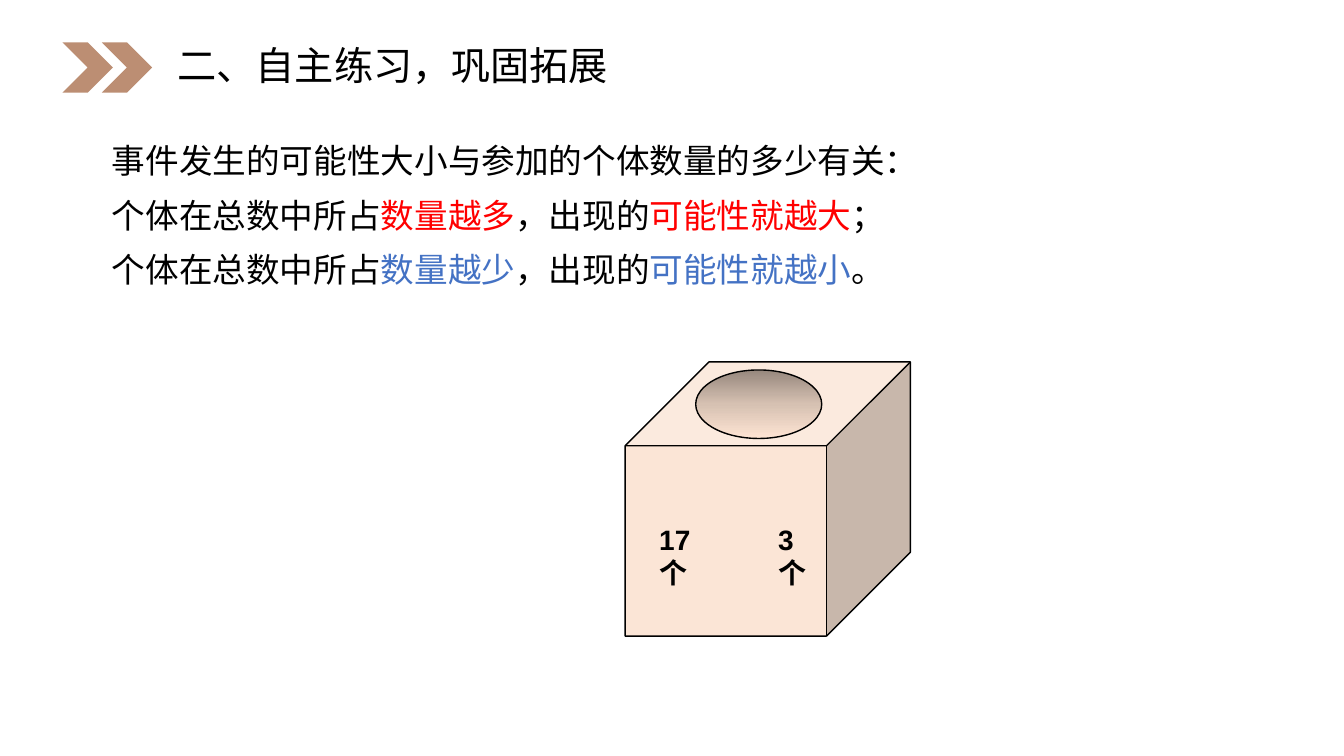
from copy import deepcopy

from lxml.etree import SubElement
from pptx import Presentation
from pptx.dml.color import RGBColor
from pptx.enum.shapes import MSO_SHAPE
from pptx.enum.text import MSO_ANCHOR, MSO_AUTO_SIZE, PP_ALIGN
from pptx.oxml.ns import qn
from pptx.util import Inches, Pt

BLACK = RGBColor(0x00, 0x00, 0x00)
RED = RGBColor(0xFF, 0x00, 0x00)
BLUE = RGBColor(0x44, 0x72, 0xC4)
BROWN = RGBColor(0xBC, 0x8E, 0x73)
PEACH = RGBColor(0xFB, 0xE5, 0xD6)
HOLE_STOPS = [(0, RGBColor(0x96, 0x87, 0x7D)),
              (0.5, RGBColor(0xD6, 0xC1, 0xB2)),
              (1, RGBColor(0xFE, 0xE4, 0xD3))]
FONT = "Arial"

TITLE = "二、自主练习，巩固拓展"
RULES = [
    [("事件发生的可能性大小与参加的个体数量的多少有关：", BLACK)],
    [("个体在总数中所占", BLACK), ("数量越多", RED), ("，出现的", BLACK),
     ("可能性就越大", RED), ("；", BLACK)],
    [("个体在总数中所占", BLACK), ("数量越少", BLUE), ("，出现的", BLACK),
     ("可能性就越小", BLUE), ("。", BLACK)],
]
# text, left, width: each box is narrow enough to put the unit on its own line
COUNTS = [("17个", 6.44, 0.6), ("3个", 7.62, 0.55)]


def place(sp, left, top, width, height):
    sp.left, sp.top = Inches(left), Inches(top)
    sp.width, sp.height = Inches(width), Inches(height)


def add_run(p, text, size, color, bold=False):
    r = p.add_run()
    r.text = text
    r.font.name, r.font.size, r.font.bold = FONT, Pt(size), bold
    r.font.color.rgb = color


def add_shape(shapes, kind, left, top, width, height, color=None, outlined=False):
    sp = shapes.add_shape(kind, Inches(left), Inches(top), Inches(width), Inches(height))
    sp.shadow.inherit = False
    if color is not None:
        sp.fill.solid()
        sp.fill.fore_color.rgb = color
    if outlined:
        sp.line.color.rgb = BLACK
        sp.line.width = Pt(1)
    else:
        sp.line.fill.background()
    return sp


def shade_hole(sp):
    """Fill with a three-stop gradient, dark at the top."""
    sp.fill.gradient()
    sp.fill.gradient_angle = 270
    stops = sp._element.spPr.find(".//" + qn("a:gsLst"))
    stops.insert(1, deepcopy(stops[0]))
    for stop, (position, color) in zip(sp.fill.gradient_stops, HOLE_STOPS):
        stop.position = position
        stop.color.rgb = color


prs = Presentation()
prs.slide_width, prs.slide_height = Inches(13.33), Inches(7.5)
s = prs.slides.add_slide(prs.slide_layouts[1])
title, body = s.placeholders

for i in range(2):
    add_shape(s.shapes, MSO_SHAPE.CHEVRON, 0.62 + 0.39 * i, 0.42, 0.5, 0.5, BROWN)

place(title, 1.66, 0.44, 5.59, 0.46)
tf = title.text_frame
tf.auto_size = MSO_AUTO_SIZE.NONE
tf.vertical_anchor = MSO_ANCHOR.MIDDLE
p = tf.paragraphs[0]
p.alignment, p.line_spacing = PP_ALIGN.LEFT, 0.9
add_run(p, TITLE, 28, BLACK)

place(body, 0.72, 1.34, 11.21, 1.59)
tf = body.text_frame
tf.auto_size = MSO_AUTO_SIZE.NONE
for i, rule in enumerate(RULES):
    p = tf.add_paragraph() if i else tf.paragraphs[0]
    p.space_before = p.space_after = Pt(5)
    pPr = p._p.get_or_add_pPr()
    pPr.set("marL", str(Inches(0.29)))
    pPr.set("indent", "0")
    SubElement(pPr, qn("a:buNone"))
    for text, color in rule:
        add_run(p, text, 24, color)

box = s.shapes.add_group_shape()
cube = add_shape(box.shapes, MSO_SHAPE.CUBE, 6.2, 3.59, 2.83, 2.72, PEACH, outlined=True)
cube.adjustments[0] = 0.306
shade_hole(add_shape(box.shapes, MSO_SHAPE.OVAL, 6.9, 3.67, 1.25, 0.68, outlined=True))

for text, left, width in COUNTS:
    tf = s.shapes.add_textbox(Inches(left), Inches(5.13), Inches(width), Inches(0.44)).text_frame
    tf.word_wrap = True
    add_run(tf.paragraphs[0], text, 20, BLACK, bold=True)

prs.save("out.pptx")
